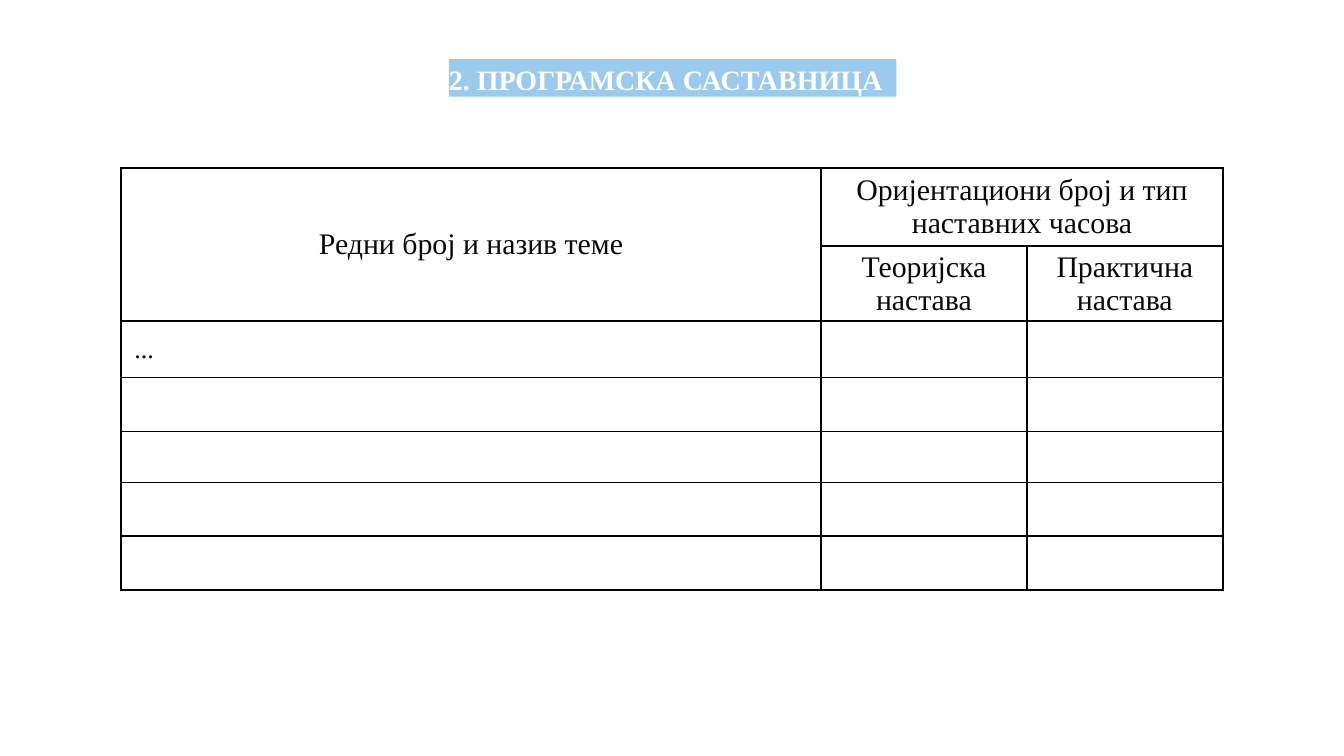
import pptx
import pptx.dml.color
import pptx.enum.shapes
import pptx.enum.text
import pptx.oxml
import pptx.util
import lxml.etree

Inches = pptx.util.Inches
Pt = pptx.util.Pt
Align = pptx.enum.text.PP_ALIGN
Anchor = pptx.enum.text.MSO_ANCHOR

THEME = {
    "font": "Times New Roman",
    "paper": "FFFFFF",
    "ink": "080808",
    "rule": "000000",
    "band": "9BCAED",
    "title": 15,
    "head": 16,
    "body": 14,
    "line": 1,
}

WIDE = 10
HIGH = WIDE * 9 / 16
COLS = [5.21, 1.53, 1.46]
ROWS = [0.58, 0.56, 0.42, 0.4, 0.38, 0.4, 0.4]
SPANS = [((0, 0), (1, 0)), ((0, 1), (0, 2))]
HEADS = {
    (0, 0): "Редни број и назив теме",
    (0, 1): "Оријентациони број и тип наставних часова",
    (1, 1): "Теоријска настава",
    (1, 2): "Практична настава",
}
BODY = {(2, 0): "..."}


def color(name):
    return pptx.dml.color.RGBColor.from_string(THEME[name])


def apply(item, form):
    for name, value in form.items():
        setattr(item, name, value)


class Deck:
    def __init__(self, theme, wide, high):
        self.theme = theme
        self.show = pptx.Presentation()
        apply(self.show, {"slide_width": Inches(wide), "slide_height": Inches(high)})
        self.slide = self.show.slides.add_slide(self.show.slide_layouts[6])

    def text(self, frame, words, size, ink, bold=False, **form):
        para = frame.paragraphs[0]
        apply(para, form)
        run = para.add_run()
        run.text = words
        apply(run.font, {"name": self.theme["font"], "size": Pt(self.theme[size]), "bold": bold})
        run.font.color.rgb = color(ink)

    def banner(self, words, box):
        shape = self.slide.shapes.add_shape(
            pptx.enum.shapes.MSO_SHAPE.RECTANGLE, *map(Inches, box))
        shape.shadow.inherit = False
        shape.fill.solid()
        shape.fill.fore_color.rgb = color("band")
        shape.line.fill.background()
        apply(shape.text_frame, {
            "margin_left": 0, "margin_right": 0, "margin_top": 0, "margin_bottom": 0,
            "word_wrap": True, "vertical_anchor": Anchor.TOP,
        })
        self.text(shape.text_frame, words, "title", "paper", True,
                  alignment=Align.LEFT, line_spacing=1.1)

    def border(self, cell):
        props = cell._tc.get_or_add_tcPr()
        for side in ("lnL", "lnR", "lnT", "lnB"):
            line = lxml.etree.SubElement(
                props, pptx.oxml.ns.qn("a:" + side), w=str(Pt(self.theme["line"])))
            fill = lxml.etree.SubElement(line, pptx.oxml.ns.qn("a:solidFill"))
            lxml.etree.SubElement(
                fill, pptx.oxml.ns.qn("a:srgbClr"), val=self.theme["rule"])

    def table(self, left, top, cols, rows, spans, heads, body):
        grid = self.slide.shapes.add_table(
            len(rows), len(cols), Inches(left), Inches(top),
            Inches(sum(cols)), Inches(sum(rows))).table
        apply(grid, {"first_row": False, "horz_banding": False})
        for col, width in zip(grid.columns, cols):
            col.width = Inches(width)
        for row, height in zip(grid.rows, rows):
            row.height = Inches(height)
        for cell in grid.iter_cells():
            apply(cell, {"margin_top": 0, "margin_bottom": 0,
                         "vertical_anchor": Anchor.MIDDLE})
            self.border(cell)
            cell.fill.solid()
            cell.fill.fore_color.rgb = color("paper")
        for first, last in spans:
            grid.cell(*first).merge(grid.cell(*last))
        for spot, words in heads.items():
            self.text(grid.cell(*spot).text_frame, words, "head", "ink",
                      alignment=Align.CENTER)
        for spot, words in body.items():
            self.text(grid.cell(*spot).text_frame, words, "body", "ink")


def main():
    deck = Deck(THEME, WIDE, HIGH)
    deck.banner("2. ПРОГРАМСКА САСТАВНИЦА", (3.34, 0.44, 3.33, 0.28))
    deck.table(0.9, 1.25, COLS, ROWS, SPANS, HEADS, BODY)
    deck.show.save("out.pptx")


if __name__ == "__main__":
    main()
